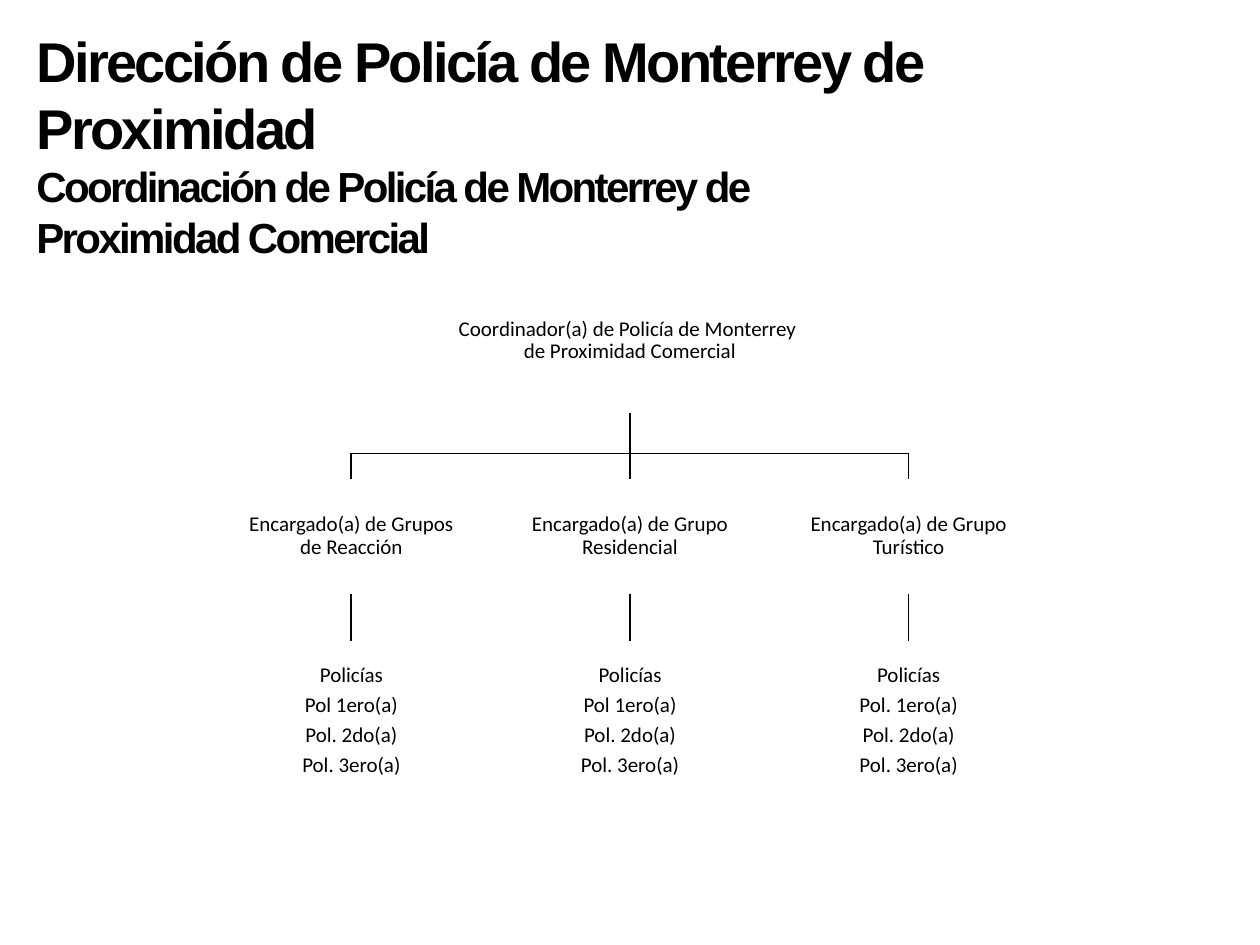
from lxml import etree
from pptx import Presentation
from pptx.dml.color import RGBColor
from pptx.enum import shapes, text
from pptx.oxml import ns
from pptx.util import Pt

BLACK = RGBColor(0, 0, 0)
WHITE = RGBColor(255, 255, 255)

CENTER_X, COLUMN_STEP, BOX_WIDTH = 360, 159.2, 132
ROOT_TOP, LEADER_TOP, OFFICERS_TOP = 170.6, 273.6, 366.5
ROW_HEIGHT, OFFICERS_HEIGHT = 65.6, 90.7
BRANCH_Y = 259.2

deck = Presentation()
deck.slide_width, deck.slide_height = Pt(720), Pt(540)
page = deck.slides.add_slide(deck.slide_layouts[6])


def add_box(center, top, width, height, lines):
    box = page.shapes.add_shape(shapes.MSO_SHAPE.RECTANGLE, Pt(center - width / 2),
                                Pt(top), Pt(width), Pt(height))
    box.shadow.inherit = False
    box.fill.solid()
    box.fill.fore_color.rgb = WHITE
    box.line.fill.background()
    frame = box.text_frame
    frame.word_wrap = True
    frame.vertical_anchor = text.MSO_ANCHOR.MIDDLE
    frame.margin_left = frame.margin_right = Pt(0.7)
    frame.margin_top = frame.margin_bottom = Pt(0.7)
    frame.text = "\n".join(lines)
    for para in frame.paragraphs:
        para.alignment = text.PP_ALIGN.CENTER
        para.line_spacing = 0.9
        para.space_after = Pt(4.2)
        para.font.name, para.font.size = "Calibri", Pt(12)
        para.font.color.rgb = BLACK
    return box


def join(upper, lower):
    """Link the bottom of one box to the top of the box straight below it."""
    link = page.shapes.add_connector(shapes.MSO_CONNECTOR.STRAIGHT, 0, 0, 0, 0)
    link.begin_connect(upper, 2)
    link.end_connect(lower, 0)
    link.line.color.rgb = BLACK
    link.line.width = Pt(1)
    etree.SubElement(link._element.spPr, ns.qn("a:effectLst"))


# Heading
heading = page.shapes.add_textbox(Pt(13.7), Pt(11.5), Pt(537), Pt(143.3))
heading.text_frame.word_wrap = True
heading.text_frame.text = (
    "Dirección de Policía de Monterrey de Proximidad\n"
    "Coordinación de Policía de Monterrey de Proximidad Comercial")
for para, size in zip(heading.text_frame.paragraphs, (32, 24)):
    para.font.name, para.font.size = "Arial", Pt(size)
    para.font.bold = True
    para.font.color.rgb = BLACK
    for span in para.runs:
        span._r.get_or_add_rPr().set("spc", "-150")

# Organisation chart
root = add_box(CENTER_X, ROOT_TOP, 216, ROW_HEIGHT,
               ["Coordinador(a) de Policía de Monterrey \vde Proximidad Comercial"])
root.text_frame.margin_bottom = Pt(18)

columns = [
    ("Encargado(a) de Grupos de Reacción", "Pol 1ero(a)"),
    ("Encargado(a) de Grupo Residencial", "Pol 1ero(a)"),
    ("Encargado(a) de Grupo Turístico", "Pol. 1ero(a)"),
]
for index, (leader_title, first_rank) in enumerate(columns):
    center = CENTER_X + (index - 1) * COLUMN_STEP
    leader = add_box(center, LEADER_TOP, BOX_WIDTH, ROW_HEIGHT, [leader_title])
    officers = add_box(center, OFFICERS_TOP, BOX_WIDTH, OFFICERS_HEIGHT,
                       ["Policías", first_rank, "Pol. 2do(a)", "Pol. 3ero(a)"])
    join(leader, officers)
    if center == CENTER_X:
        join(root, leader)
        continue
    outline = page.shapes.build_freeform(Pt(CENTER_X), Pt(ROOT_TOP + ROW_HEIGHT))
    outline.add_line_segments(
        [(Pt(CENTER_X), Pt(BRANCH_Y)), (Pt(center), Pt(BRANCH_Y)),
         (Pt(center), Pt(LEADER_TOP))], close=False)
    branch = outline.convert_to_shape()
    branch.shadow.inherit = False
    branch.fill.background()
    branch.line.color.rgb = BLACK
    branch.line.width = Pt(1)

deck.save("out.pptx")
